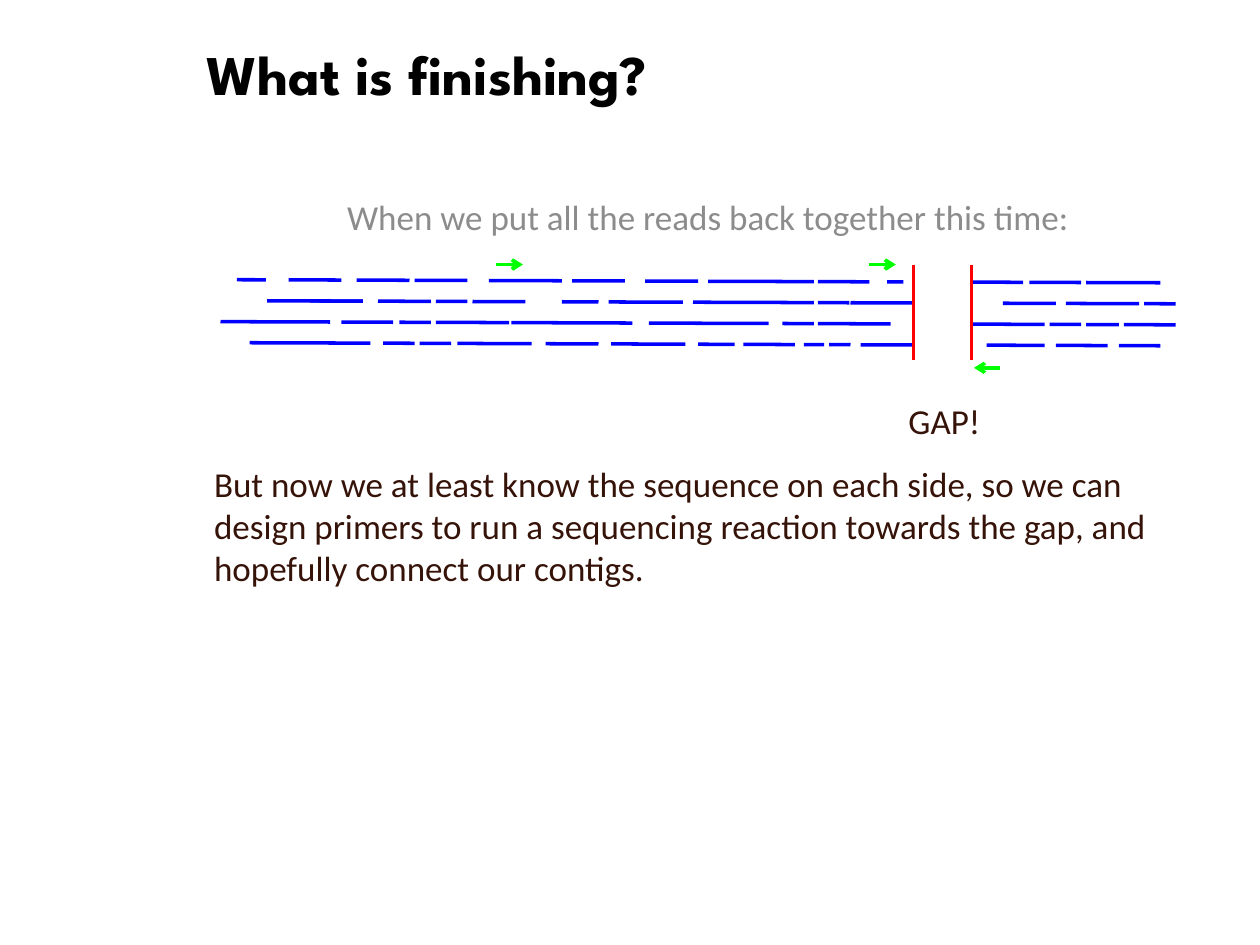
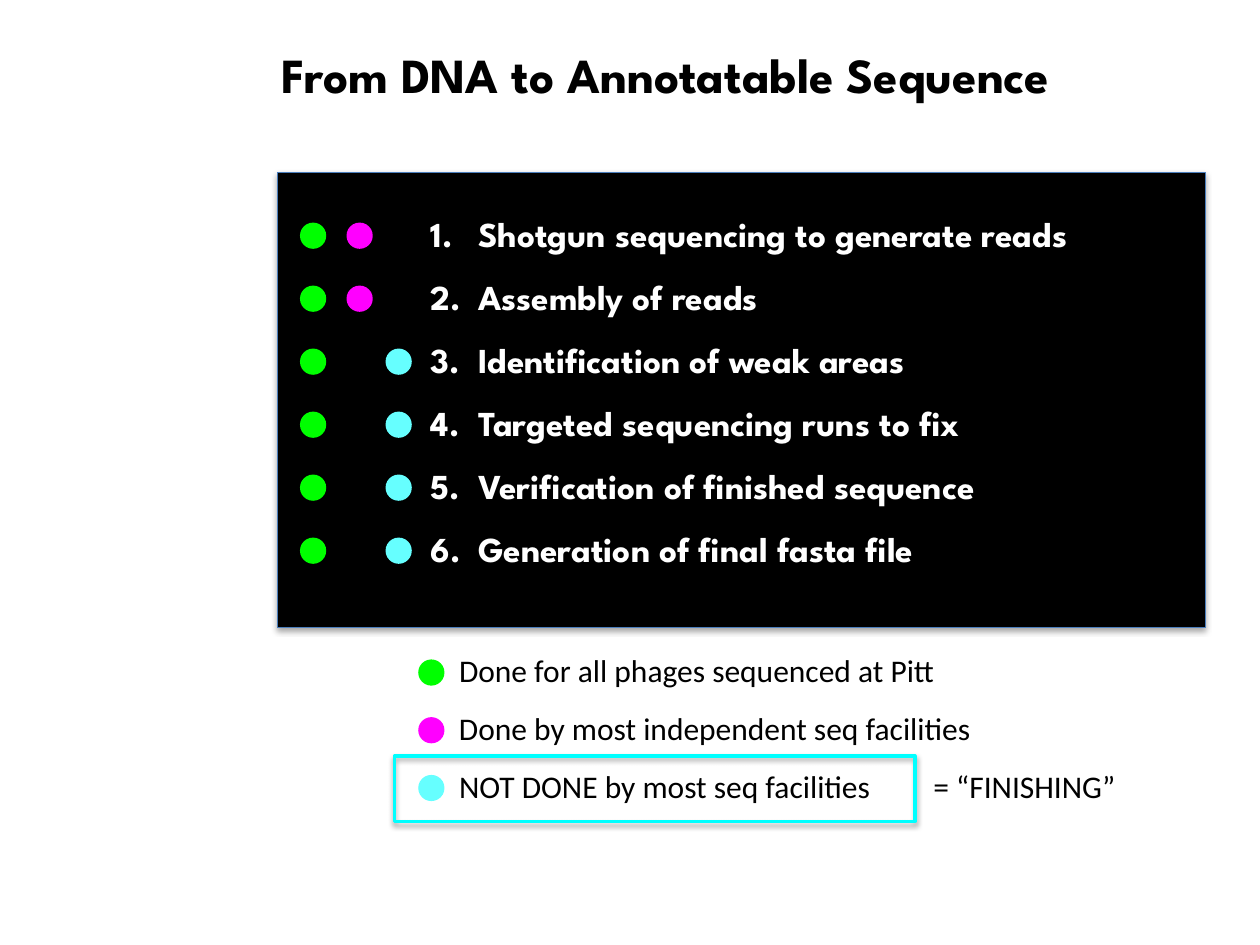
import pptx
import pptx.dml.color
import pptx.enum.shapes
import pptx.enum.text
import pptx.oxml
import pptx.oxml.ns
import pptx.util
from lxml import etree

Pt = pptx.util.Pt
qn = pptx.oxml.ns.qn
ALIGN = pptx.enum.text.PP_ALIGN
SHAPE = pptx.enum.shapes.MSO_SHAPE

# Shared look
COLORS = {
    "black": "000000", "white": "FFFFFF", "grey": "8C8C8C", "brown": "361309",
    "read": "0000FF", "gap": "FF0000", "primer": "00FF00", "panel_edge": "4B7EBC",
    "all_phages": "00FF00", "independent": "FF00FF", "not_done": "66FFFF",
    "frame": "00FFFF",
}
HEADING_FONT, BODY_FONT = "League Spartan", "Calibri"
LINE_WIDTH = 2
DOT = 15

# Finishing slide: (start, end) of each read, one list per row
FINISHING_TITLE = "What is finishing?"
READS_INTRO = "When we put all the reads back together this time:"
GAP_LABEL = "GAP!"
GAP_NOTE = ("But now we at least know the sequence on each side, so we can design "
            "primers to run a sequencing reaction towards the gap, and hopefully "
            "connect our contigs.")
READ_ROWS = [
    [(135.4, 151.9), (164.9, 195.1), (203.8, 234), (236.9, 267.1), (279.4, 321.1),
     (326.9, 357.1), (368.6, 398.9), (404.6, 465.1), (467.3, 496.8), (506.9, 516.2),
     (555.1, 584.6), (588.2, 617.8), (620.6, 663.1)],
    [(152.6, 207.4), (177.1, 207.4), (216, 246.2), (249.1, 267.1), (270, 300.2),
     (321.1, 342), (347.8, 390.2), (396, 465.1), (467.3, 485.3), (486, 522),
     (573.1, 603.4), (609.1, 650.9), (653.8, 671.8)],
    [(126, 188.6), (195.1, 224.6), (228.2, 246.2), (249.1, 290.9), (292.3, 361.4),
     (370.8, 439.2), (447.1, 465.1), (467.3, 509), (555.1, 596.9), (599.8, 617.8),
     (620.6, 639.4), (642.2, 671.8)],
    [(142.6, 211.7), (218.9, 236.9), (239.8, 257.8), (261.4, 303.8), (311.8, 342),
     (349.2, 391.7), (398.9, 419.8), (424.8, 454.3), (459.4, 470.9), (473.8, 486),
     (491.8, 522), (563.8, 596.9), (603.4, 632.9), (639.4, 663.1)],
]
READ_TOP, READ_PITCH, READ_TILT = 159.4, 12, 0.0033
GAP_EDGES = [522, 555.1]
PRIMERS = [(496.8, 511.9, 151.2), (571.7, 556.6, 210.2), (283.7, 298.8, 151.2)]

# Steps slide: each step with the groups that carry it out
STEPS_TITLE = "From DNA to Annotatable Sequence"
STEPS = [
    ("Shotgun sequencing to generate reads", ("all_phages", "independent")),
    ("Assembly of reads", ("all_phages", "independent")),
    ("Identification of weak areas", ("all_phages", "not_done")),
    ("Targeted sequencing runs to fix", ("all_phages", "not_done")),
    ("Verification of finished sequence", ("all_phages", "not_done")),
    ("Generation of final fasta file", ("all_phages", "not_done")),
]
DOT_COLUMNS = {"all_phages": 171.4, "independent": 198, "not_done": 220.3}
STEP_TOP, STEP_PITCH = 127.2, 36
LEGEND = [
    ("all_phages", "Done for all phages sequenced at Pitt", 289.4),
    ("independent", "Done by most independent seq facilities", 316.8),
    ("not_done", "NOT DONE by most seq facilities", 252.7),
]
LEGEND_TOP, LEGEND_PITCH = 376.8, 33
FINISHING_LABEL = "= “FINISHING”"


def rgb(name):
    return pptx.dml.color.RGBColor.from_string(COLORS[name])


def write(box, lines, at, size=20, font=BODY_FONT, color="black", bold=False,
          align=ALIGN.LEFT, margin=0, hanging=0, after=0, numbered=False,
          top_inset=3.6, wrap=True):
    """Place a text box or placeholder and fill it with formatted paragraphs."""
    box.left, box.top, box.width, box.height = map(Pt, at)
    frame = box.text_frame
    frame.word_wrap = wrap
    frame.auto_size = pptx.enum.text.MSO_AUTO_SIZE.NONE
    frame.vertical_anchor = pptx.enum.text.MSO_ANCHOR.TOP
    frame.margin_left = frame.margin_right = Pt(7.2)
    frame.margin_top, frame.margin_bottom = Pt(top_inset), Pt(3.6)
    for index, line in enumerate(lines):
        paragraph = frame.add_paragraph() if index else frame.paragraphs[0]
        paragraph.alignment = align
        paragraph.space_before, paragraph.space_after = Pt(0), Pt(after)
        properties = paragraph._p.get_or_add_pPr()
        properties.set("marL", str(Pt(margin)))
        properties.set("indent", str(Pt(-hanging)))
        if numbered:
            etree.SubElement(properties, qn("a:buFont"), typeface="+mj-lt")
            etree.SubElement(properties, qn("a:buAutoNum"), type="arabicPeriod")
        run = paragraph.add_run()
        run.text = line
        run.font.size, run.font.name, run.font.bold = Pt(size), font, bold
        run.font.color.rgb = rgb(color)


def add_text(slide, line, at, **style):
    write(slide.shapes.add_textbox(*map(Pt, at)), [line], at, **style)


def add_title(slide, line, at, size):
    write(slide.shapes.title, [line], at, size=size, font=HEADING_FONT, bold=True)


def add_line(slide, x1, y1, x2, y2, color, arrow=False):
    line = slide.shapes.add_connector(
        pptx.enum.shapes.MSO_CONNECTOR.STRAIGHT, *map(Pt, (x1, y1, x2, y2)))
    line.line.color.rgb = rgb(color)
    line.line.width = Pt(LINE_WIDTH)
    properties = line._element.spPr
    if arrow:
        etree.SubElement(properties.find(qn("a:ln")), qn("a:tailEnd"), type="arrow")
    etree.SubElement(properties, qn("a:effectLst"))


def add_figure(slide, kind, at, fill=None, edge=None, width=LINE_WIDTH, shadow=False):
    figure = slide.shapes.add_shape(kind, *map(Pt, at))
    figure.shadow.inherit = False
    if fill:
        figure.fill.solid()
        figure.fill.fore_color.rgb = rgb(fill)
    else:
        figure.fill.background()
    if edge:
        figure.line.color.rgb = rgb(edge)
        figure.line.width = Pt(width)
    else:
        figure.line.fill.background()
    if shadow:
        effects = figure._element.spPr.find(qn("a:effectLst"))
        outer = etree.SubElement(effects, qn("a:outerShdw"), blurRad=str(Pt(3.1)),
                                 dist=str(Pt(1.8)), dir="5400000", rotWithShape="0")
        tone = etree.SubElement(outer, qn("a:srgbClr"), val=COLORS["black"])
        etree.SubElement(tone, qn("a:alpha"), val="35000")
    return figure


def add_dot(slide, left, top, group):
    add_figure(slide, SHAPE.OVAL, (left, top, DOT, DOT), fill=group)


def build_finishing(deck):
    slide = deck.slides.add_slide(deck.slide_layouts[0])
    add_title(slide, FINISHING_TITLE, (110.9, 18.7, 536.4, 46.1), 32)
    write(slide.placeholders[1], [READS_INTRO], (113, 108, 583.2, 102.2),
          color="grey", align=ALIGN.CENTER)

    # Reads drift slightly downwards from left to right
    for row, reads in enumerate(READ_ROWS):
        row_top = READ_TOP + row * READ_PITCH
        for start, end in reads:
            add_line(slide, start, row_top + start * READ_TILT,
                     end, row_top + end * READ_TILT, "read")

    # Gap and the primers pointing at it
    for x in GAP_EDGES:
        add_line(slide, x, 151.2, x, 205.9, "gap")
    for start, end, y in PRIMERS:
        add_line(slide, start, y, end, y, "primer", arrow=True)

    note_style = dict(color="brown", margin=2.25, top_inset=0)
    add_text(slide, GAP_LABEL, (506.2, 228.2, 64.8, 36), align=ALIGN.CENTER, **note_style)
    add_text(slide, GAP_NOTE, (113, 264.2, 583.2, 102.2), **note_style)


def build_steps(deck):
    slide = deck.slides.add_slide(deck.slide_layouts[1])
    add_title(slide, STEPS_TITLE, (153.4, 21.6, 536.4, 41), 28)

    # Panel goes behind the numbered list
    panel = add_figure(slide, SHAPE.RECTANGLE, (158.4, 98.6, 530.6, 259.9),
                       fill="black", edge="panel_edge", width=0.75, shadow=True)
    slide.shapes._spTree.insert(2, panel._element)
    write(slide.placeholders[1], [step for step, _ in STEPS],
          (239, 118.1, 419.8, 213.1), font=HEADING_FONT, color="white", bold=True,
          margin=27, hanging=27, after=12, numbered=True)
    for index, (_, groups) in enumerate(STEPS):
        for group in groups:
            add_dot(slide, DOT_COLUMNS[group], STEP_TOP + index * STEP_PITCH, group)

    # Legend
    for index, (group, meaning, width) in enumerate(LEGEND):
        top = LEGEND_TOP + index * LEGEND_PITCH
        add_dot(slide, 239, top, group)
        add_text(slide, meaning, (255.2, top - 8.2, width, 28.8), size=18, wrap=False)
    add_figure(slide, SHAPE.RECTANGLE, (225.4, 432, 297.4, 37.4),
               edge="frame", shadow=True)
    add_text(slide, FINISHING_LABEL, (526.3, 434.9, 119.5, 28.8), size=18, wrap=False)


def main():
    deck = pptx.Presentation()
    deck.slide_width, deck.slide_height = Pt(720), Pt(540)
    build_finishing(deck)
    build_steps(deck)
    deck.save("out.pptx")


if __name__ == "__main__":
    main()
